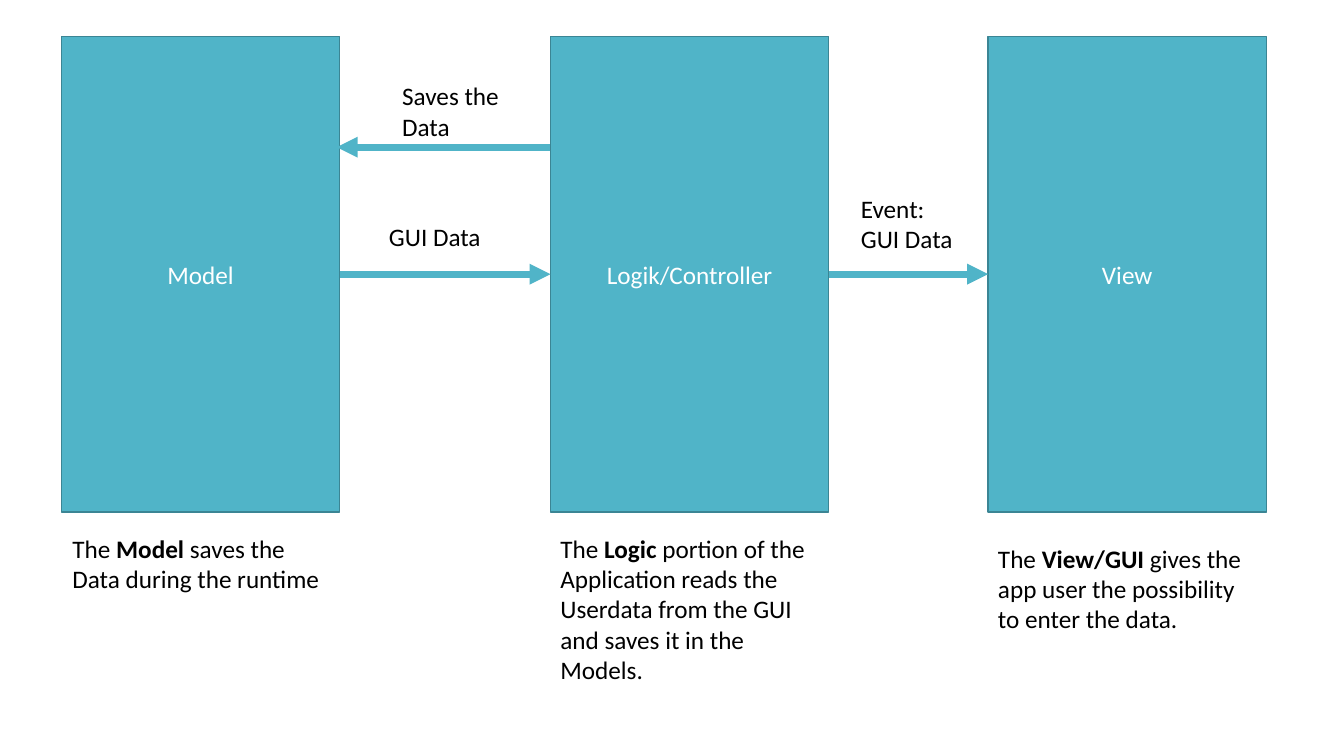
from lxml import etree
from pptx import Presentation
from pptx import util as u
from pptx.dml.color import RGBColor
from pptx.enum import shapes, text
from pptx.oxml.ns import qn

PX = 9144  # 100 px to the inch
TEAL = RGBColor(0x50, 0xB4, 0xC8)
EDGE = RGBColor(0x3B, 0x85, 0x94)
WHITE = RGBColor(0xFF, 0xFF, 0xFF)
BLACK = RGBColor(0, 0, 0)
FONT = {"name": "Calibri", "size": u.Pt(18)}

TOP, WIDE, HIGH = 36, 276, 472
LEFT, RIGHT = 1, 3  # connection sites of a rectangle

# name, left edge, caption box, caption as (words, bold)
PARTS = [
    ("Model", 61, (62, 524, 273, 101),
     [("The ", False), ("Model ", True),
      ("saves the Data during the runtime", False)]),
    ("Logik/Controller", 546, (546, 524, 276, 192),
     [("The ", False), ("Logic ", True),
      ("portion of the Application reads the Userdata from the GUI "
       "and saves it in the Models.", False)]),
    ("View", 980, (980, 534, 276, 101),
     [("The ", False), ("View/GUI ", True),
      ("gives the app user the possibility to enter the data.", False)]),
]
LABELS = [
    ("Saves the Data", (389, 75, 132, 71)),
    ("GUI Data", (376, 215, 113, 40)),
    ("Event:\nGUI Data", (844, 187, 113, 71)),
]


def px(*nums):
    return [u.Emu(n * PX) for n in nums]


def style(font, color, **more):
    for key, val in {**FONT, **more}.items():
        setattr(font, key, val)
    font.color.rgb = color


def block(slide, name, box):
    """Filled rectangle with its name in the middle."""
    rect = slide.shapes.add_shape(shapes.MSO_SHAPE.RECTANGLE, *px(*box))
    rect.shadow.inherit = False
    rect.fill.solid()
    rect.fill.fore_color.rgb = TEAL
    rect.line.color.rgb = EDGE
    rect.line.width = u.Pt(1)
    frame = rect.text_frame
    frame.vertical_anchor = text.MSO_ANCHOR.MIDDLE
    para = frame.paragraphs[0]
    para.alignment = text.PP_ALIGN.CENTER
    run = para.add_run()
    run.text = name
    style(run.font, WHITE)
    return rect


def note(slide, runs, box):
    """Text box of one paragraph, from (words, bold) pairs."""
    frame = slide.shapes.add_textbox(*px(*box)).text_frame
    frame.word_wrap = True
    frame.auto_size = text.MSO_AUTO_SIZE.SHAPE_TO_FIT_TEXT
    para = frame.paragraphs[0]
    for words, bold in runs:
        for i, line in enumerate(words.split("\n")):
            if i:
                para.add_line_break()
            run = para.add_run()
            run.text = line
            style(run.font, BLACK, bold=bold)


def arrow(slide, start, end):
    line = slide.shapes.add_connector(
        shapes.MSO_CONNECTOR.STRAIGHT, *px(*start, *end))
    line.line.color.rgb = TEAL
    line.line.width = u.Pt(5)
    props = line.line._get_or_add_ln()
    etree.SubElement(props, qn("a:tailEnd"), type="triangle")
    etree.SubElement(props.getparent(), qn("a:effectLst"))
    return line


def link(slide, first, second):
    """Arrow glued from the right side of one block to the left of the next."""
    line = arrow(slide, (0, 0), (0, 0))
    line.begin_connect(first, RIGHT)
    line.end_connect(second, LEFT)


def flow(slide):
    """Three captioned blocks with the arrows between them."""
    rects = []
    for name, left, box, runs in PARTS:
        rects.append(block(slide, name, (left, TOP, WIDE, HIGH)))
        note(slide, runs, box)
    for first, second in zip(rects, rects[1:]):
        link(slide, first, second)
    arrow(slide, (546, 146), (334, 146))
    for words, box in LABELS:
        note(slide, [(words, False)], box)


def main():
    deck = Presentation()
    deck.slide_width, deck.slide_height = px(1333, 750)
    flow(deck.slides.add_slide(deck.slide_layouts[6]))
    deck.save("out.pptx")


if __name__ == "__main__":
    main()
